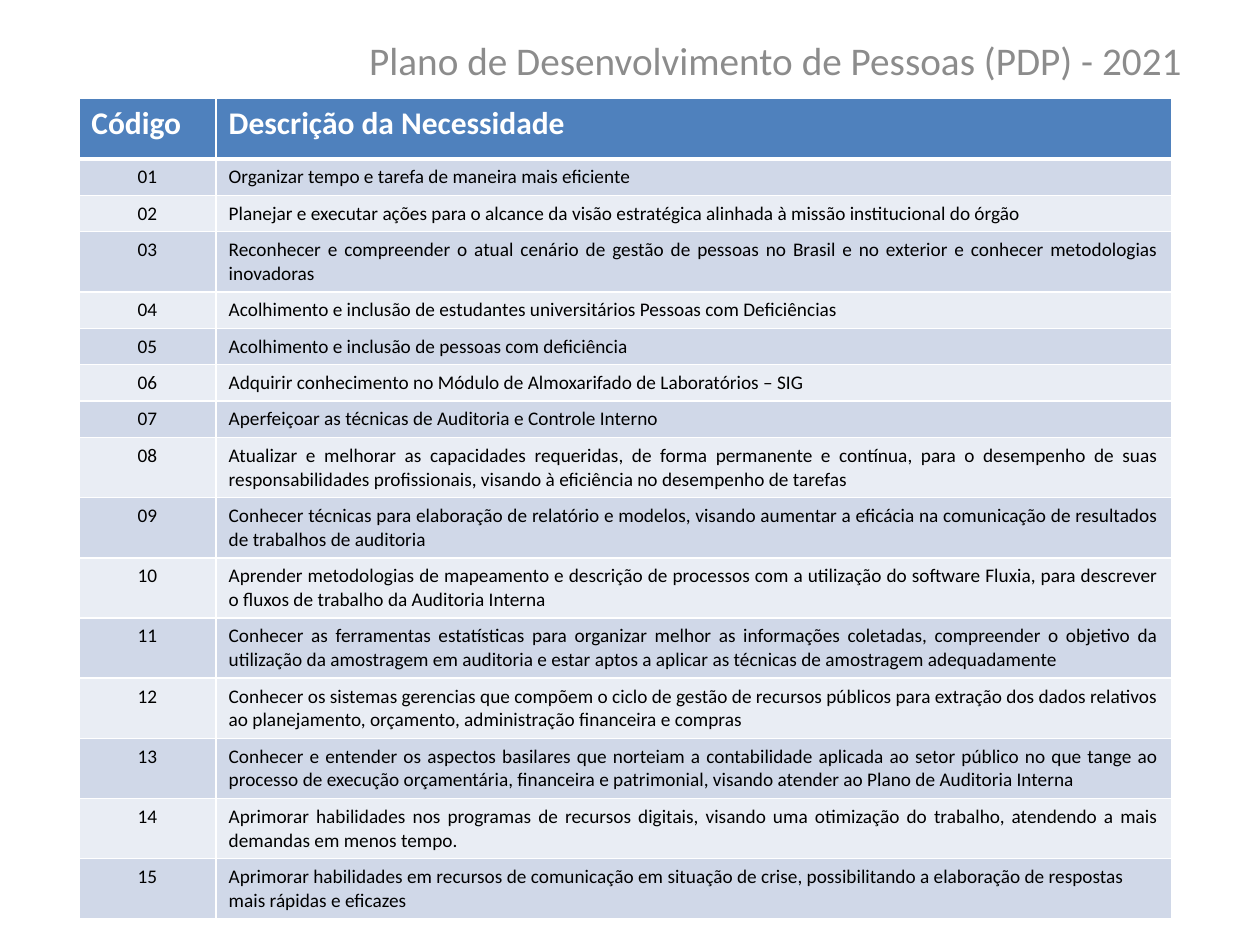
import pptx
import pptx.dml.color
import pptx.enum.text
import pptx.oxml.ns
import pptx.util
from lxml import etree

Pt = pptx.util.Pt
RGBColor = pptx.dml.color.RGBColor
ALIGN = pptx.enum.text.PP_ALIGN

GRAY = RGBColor(0x8C, 0x8C, 0x8C)
BLUE = RGBColor(0x4F, 0x81, 0xBD)
DARK_BAND = RGBColor(0xD0, 0xD8, 0xE8)
LIGHT_BAND = RGBColor(0xE9, 0xED, 0xF4)
WHITE = RGBColor(0xFF, 0xFF, 0xFF)
BLACK = RGBColor(0, 0, 0)

HEADER_HEIGHT = 34.5
ONE_LINE_HEIGHT = 20.8
TWO_LINE_HEIGHT = 34.4
ONE_LINE_LIMIT = 105  # characters that fit on one line of the wide column

NEEDS = [
    "Organizar tempo e tarefa de maneira mais eficiente",
    "Planejar e executar ações para o alcance da visão estratégica alinhada à missão institucional do órgão",
    "Reconhecer e compreender o atual cenário de gestão de pessoas no Brasil e no exterior e conhecer "
    "metodologias inovadoras",
    "Acolhimento e inclusão de estudantes universitários Pessoas com Deficiências",
    "Acolhimento e inclusão de pessoas com deficiência",
    "Adquirir conhecimento no Módulo de Almoxarifado de Laboratórios – SIG",
    "Aperfeiçoar as técnicas de Auditoria e Controle Interno",
    "Atualizar e melhorar as capacidades requeridas, de forma permanente e contínua, para o desempenho de "
    "suas responsabilidades profissionais, visando à eficiência no desempenho de tarefas",
    "Conhecer técnicas para elaboração de relatório e modelos, visando aumentar a eficácia na comunicação "
    "de resultados de trabalhos de auditoria",
    "Aprender metodologias de mapeamento e descrição de processos com a utilização do software Fluxia, "
    "para descrever o fluxos de trabalho da Auditoria Interna",
    "Conhecer as ferramentas estatísticas para organizar melhor as informações coletadas, compreender o "
    "objetivo da utilização da amostragem em auditoria e estar aptos a aplicar as técnicas de amostragem "
    "adequadamente",
    "Conhecer os sistemas gerencias que compõem o ciclo de gestão de recursos públicos para extração dos "
    "dados relativos ao planejamento, orçamento, administração financeira e compras",
    "Conhecer e entender os aspectos basilares que norteiam a contabilidade aplicada ao setor público no "
    "que tange ao processo de execução orçamentária, financeira e patrimonial, visando atender ao Plano de "
    "Auditoria Interna",
    "Aprimorar habilidades nos programas de recursos digitais, visando uma otimização do trabalho, "
    "atendendo a mais demandas em menos tempo.",
    "Aprimorar habilidades em recursos de comunicação em situação de crise, possibilitando a elaboração de "
    "respostas mais rápidas e eficazes",
]


class SlideBuilder:
    font_name = "Calibri"

    def __init__(self, slide):
        self.slide = slide

    def set_text(self, text_frame, text, size, color, align, bold=False):
        text_frame.text = text
        paragraph = text_frame.paragraphs[0]
        paragraph.alignment = align
        font = paragraph.font
        font.name, font.size, font.bold = self.font_name, Pt(size), bold
        font.color.rgb = color

    def title(self, text, left, top, width, height):
        shape = self.slide.shapes.title
        shape.left, shape.top, shape.width, shape.height = map(Pt, (left, top, width, height))
        shape.text_frame.vertical_anchor = pptx.enum.text.MSO_ANCHOR.TOP
        self.set_text(shape.text_frame, text, 22.4, GRAY, ALIGN.CENTER)

    def table(self, left, top, column_widths, row_heights):
        frame = self.slide.shapes.add_table(
            len(row_heights), len(column_widths), Pt(left), Pt(top),
            Pt(sum(column_widths)), Pt(sum(row_heights)))
        for column, width in zip(frame.table.columns, column_widths):
            column.width = Pt(width)
        for row, height in zip(frame.table.rows, row_heights):
            row.height = Pt(height)
        return frame.table

    def cell(self, cell, text, size, color, fill, align, bold=False, top_line=1, bottom_line=1):
        self.set_text(cell.text_frame, text, size, color, align, bold)
        self.borders(cell, {"lnL": 1, "lnR": 1, "lnT": top_line, "lnB": bottom_line})
        cell.fill.solid()
        cell.fill.fore_color.rgb = fill

    def borders(self, cell, widths):
        qn = pptx.oxml.ns.qn
        properties = cell._tc.get_or_add_tcPr()
        for side, width in widths.items():
            line = etree.SubElement(properties, qn(f"a:{side}"), w=str(Pt(width)))
            fill = etree.SubElement(line, qn("a:solidFill"))
            etree.SubElement(fill, qn("a:srgbClr"), val=str(WHITE))


def main():
    presentation = pptx.Presentation()
    presentation.slide_width, presentation.slide_height = Pt(720), Pt(540)
    builder = SlideBuilder(presentation.slides.add_slide(presentation.slide_layouts[5]))

    builder.title("Plano de Desenvolvimento de Pessoas (PDP) - 2021", 191.5, 17, 504, 54)

    row_heights = [HEADER_HEIGHT] + [
        ONE_LINE_HEIGHT if len(need) <= ONE_LINE_LIMIT else TWO_LINE_HEIGHT for need in NEEDS]
    table = builder.table(45, 56.3, [78.5, 545.8], row_heights)

    for column, heading in enumerate(["Código", "Descrição da Necessidade"]):
        builder.cell(table.cell(0, column), heading, 18, WHITE, BLUE, ALIGN.LEFT,
                     bold=True, bottom_line=3)
    for number, need in enumerate(NEEDS, start=1):
        band = DARK_BAND if number % 2 else LIGHT_BAND
        top_line = 3 if number == 1 else 1
        need_align = ALIGN.LEFT if number == len(NEEDS) else ALIGN.JUSTIFY
        for column, (text, align) in enumerate([(f"{number:02}", ALIGN.CENTER), (need, need_align)]):
            builder.cell(table.cell(number, column), text, 11, BLACK, band, align, top_line=top_line)

    presentation.save("out.pptx")


if __name__ == "__main__":
    main()
